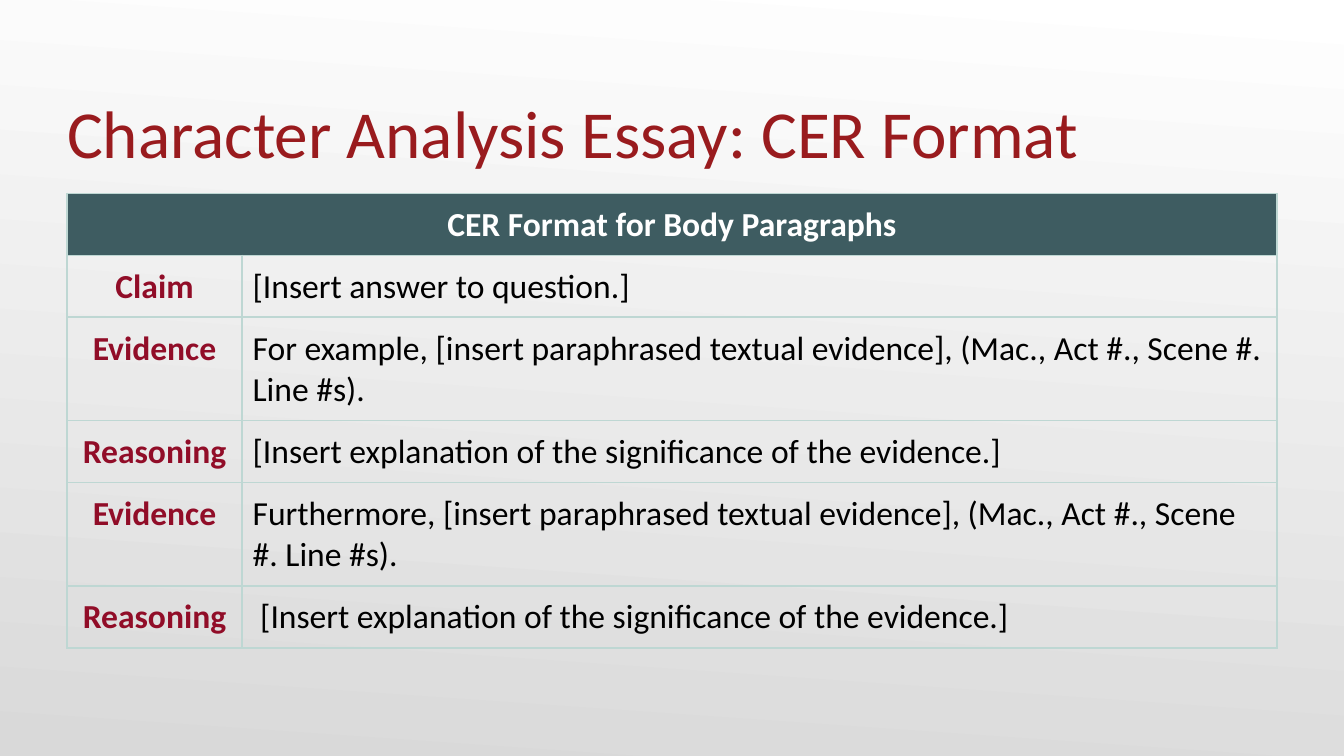
from lxml import etree
from pptx import Presentation
from pptx.dml.color import RGBColor
from pptx.enum.text import MSO_ANCHOR, PP_ALIGN
from pptx.oxml.ns import qn
from pptx.util import Inches, Pt

LEFT, CENTER = PP_ALIGN.LEFT, PP_ALIGN.CENTER
TOP, BOTTOM = MSO_ANCHOR.TOP, MSO_ANCHOR.BOTTOM
WHITE = RGBColor(0xFF, 0xFF, 0xFF)
GRAY = RGBColor(0xD9, 0xD9, 0xD9)
BLACK = RGBColor(0, 0, 0)
RED = RGBColor(0x99, 0x1B, 0x1E)
WINE = RGBColor(0x91, 0x0D, 0x28)
TEAL = RGBColor(0x3E, 0x5C, 0x61)
MINT = RGBColor(0xBE, 0xD7, 0xD3)


def write(frame, text, size, color, bold=False, align=LEFT):
    para = frame.paragraphs[0]
    para.alignment = align
    run = para.add_run()
    run.text = text
    run.font.color.rgb = color
    look = {"name": "Calibri", "size": Pt(size), "bold": bold}
    for key, value in look.items():
        setattr(run.font, key, value)


def border(cell):
    props = cell._tc.get_or_add_tcPr()
    for spot, side in enumerate(("lnL", "lnR", "lnT", "lnB")):
        line = etree.Element(qn("a:" + side), w=str(Pt(1)))
        fill = etree.SubElement(line, qn("a:solidFill"))
        etree.SubElement(fill, qn("a:srgbClr"), val=str(MINT))
        props.insert(spot, line)


# Widescreen 16:9 slide
deck = Presentation()
deck.slide_width = Inches(10)
deck.slide_height = Inches(10 * 9 / 16)
slide = deck.slides.add_slide(deck.slide_layouts[6])

# Background
back = slide.background.fill
back.gradient()
back.gradient_angle = 266
for stop, color in zip(back.gradient_stops, (WHITE, GRAY)):
    stop.color.rgb = color

# Title
title = slide.shapes.add_textbox(Inches(0.5), Inches(0.34), Inches(9), Inches(0.94))
frame = title.text_frame
form = {"word_wrap": True, "vertical_anchor": BOTTOM, "margin_left": 0,
        "margin_top": Inches(0.05), "margin_right": 0, "margin_bottom": 0}
for key, value in form.items():
    setattr(frame, key, value)
write(frame, "Character Analysis Essay: CER Format", 36, RED)

# Table
rows = [
    ("CER Format for Body Paragraphs", ""),
    ("Claim", "[Insert answer to question.]"),
    ("Evidence", "For example, [insert paraphrased textual evidence], "
                 "(Mac., Act #., Scene #. Line #s)."),
    ("Reasoning", "[Insert explanation of the significance of the evidence.]"),
    ("Evidence", "Furthermore, [insert paraphrased textual evidence], "
                 "(Mac., Act #., Scene #. Line #s)."),
    ("Reasoning", " [Insert explanation of the significance of the evidence.]"),
]
table = slide.shapes.add_table(len(rows), 2, Inches(0.5), Inches(1.44),
                               Inches(9), Inches(3.38)).table
table.horz_banding = False
table.columns[0].width, table.columns[1].width = Inches(1.3), Inches(7.7)
table.cell(0, 0).merge(table.cell(0, 1))

pad = Inches(0.08)
room = {"margin_left": pad, "margin_right": pad, "margin_top": pad,
        "margin_bottom": pad, "vertical_anchor": TOP}
for r, texts in enumerate(rows):
    table.rows[r].height = Inches(0.77 if texts[0] == "Evidence" else 0.46)
    for c, text in enumerate(texts):
        cell = table.cell(r, c)
        for key, value in room.items():
            setattr(cell, key, value)
        if r == 0:
            cell.fill.solid()
            cell.fill.fore_color.rgb = TEAL
        else:
            cell.fill.background()
        border(cell)
        if text:
            color = BLACK if c else WINE if r else WHITE
            write(cell.text_frame, text, 18, color, c == 0, LEFT if c else CENTER)

deck.save("out.pptx")
